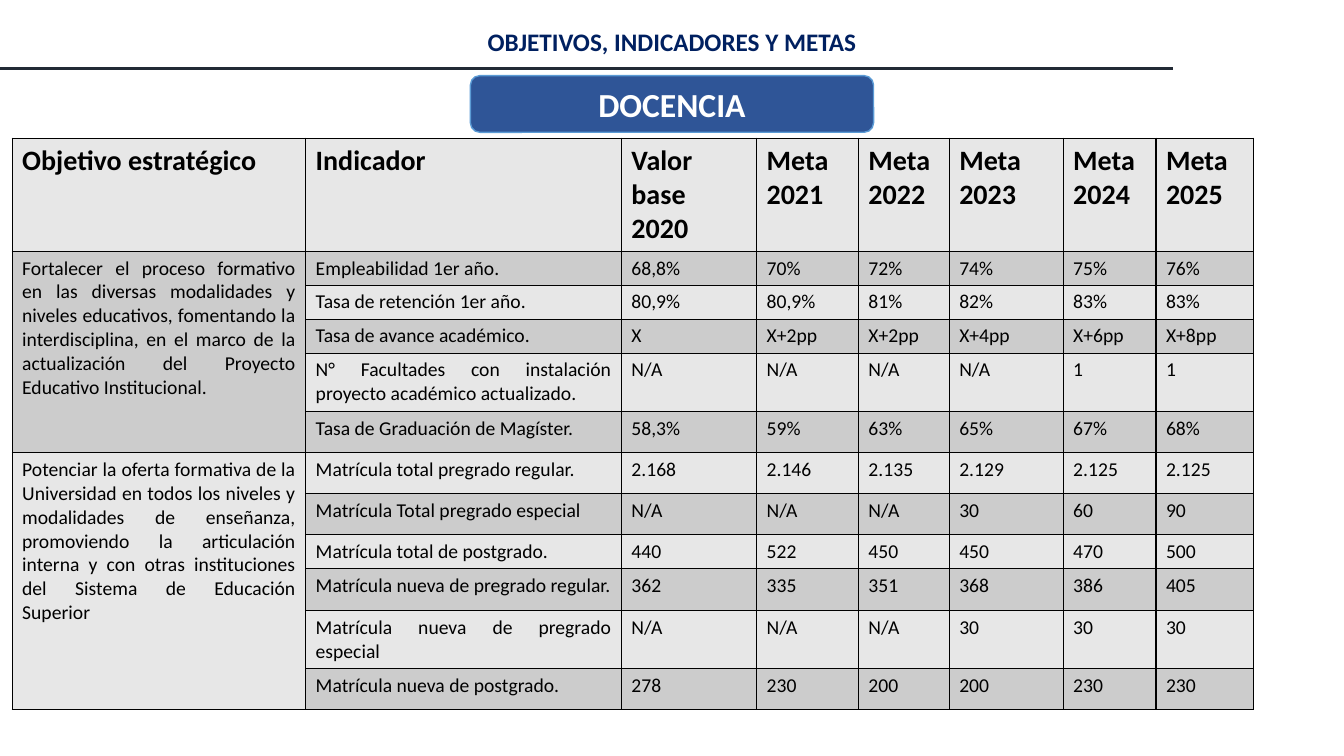
"""Build the slide of teaching goals, indicators and targets."""
from lxml import etree
from pptx import Presentation
from pptx.dml.color import RGBColor
from pptx.enum.shapes import MSO_CONNECTOR, MSO_SHAPE
from pptx.enum.text import MSO_ANCHOR, MSO_AUTO_SIZE, PP_ALIGN
from pptx.oxml.ns import qn
from pptx.util import Inches, Pt

LINE = MSO_CONNECTOR.STRAIGHT
ROUND = MSO_SHAPE.ROUNDED_RECTANGLE
TOP, MIDDLE = MSO_ANCHOR.TOP, MSO_ANCHOR.MIDDLE
FIXED = MSO_AUTO_SIZE.NONE
LEFT, CENTER, JUSTIFY = PP_ALIGN.LEFT, PP_ALIGN.CENTER, PP_ALIGN.JUSTIFY

WIDE, HIGH = Inches(13.33), Inches(7.5)
FONT = "Calibri"
BLACK, WHITE, NAVY, BLUE = "000000", "FFFFFF", "002060", "2F5597"
EDGE, RULE = "5B9BD5", "222A35"
BANDS = ("E7E7E7", "CCCCCC")
SIDES = ("a:lnL", "a:lnR", "a:lnT", "a:lnB")

COLS = (2.91, 3.13, 1.34, 1.01, 0.9, 1.13, 0.92, 0.97)
ROWS = (1.07, 0.32, 0.32, 0.32, 0.57, 0.4, 0.4, 0.4, 0.32, 0.41, 0.55, 0.4)
HEAD = ["Objetivo estratégico", "Indicador", "Valor base 2020"] + [
    f"Meta {year}" for year in range(2021, 2026)]
GOALS = (
    ("Fortalecer el proceso formativo en las diversas modalidades y niveles "
     "educativos, fomentando la interdisciplina, en el marco de la "
     "actualización del Proyecto Educativo Institucional.", (
         ("Empleabilidad 1er año.", "68,8% 70% 72% 74% 75% 76%"),
         ("Tasa de retención 1er año.", "80,9% 80,9% 81% 82% 83% 83%"),
         ("Tasa de avance académico.", "X X+2pp X+2pp X+4pp X+6pp X+8pp"),
         ("N° Facultades con instalación proyecto académico actualizado.",
          "N/A N/A N/A N/A 1 1"),
         ("Tasa de Graduación de Magíster.", "58,3% 59% 63% 65% 67% 68%"))),
    ("Potenciar la oferta formativa de la Universidad en todos los niveles y "
     "modalidades de enseñanza, promoviendo la articulación interna y con "
     "otras instituciones del Sistema de Educación Superior", (
         ("Matrícula total pregrado regular.",
          "2.168 2.146 2.135 2.129 2.125 2.125"),
         ("Matrícula Total pregrado especial", "N/A N/A N/A 30 60 90"),
         ("Matrícula total de postgrado.", "440 522 450 450 470 500"),
         ("Matrícula nueva de pregrado regular.", "362 335 351 368 386 405"),
         ("Matrícula nueva de pregrado especial", "N/A N/A N/A 30 30 30"),
         ("Matrícula nueva de postgrado.", "278 230 200 200 230 230"))),
)


def across(share):
    """Turn a percentage of the slide's width into a length."""
    return round(WIDE * share / 100)


def down(share):
    """Turn a percentage of the slide's height into a length."""
    return round(HIGH * share / 100)


def color(text):
    """Turn a hex string into a colour."""
    return RGBColor.from_string(text)


def paint(item, tone):
    """Fill a shape or cell with one colour."""
    item.fill.solid()
    item.fill.fore_color.rgb = color(tone)


def write(frame, text, size, tone, bold, align):
    """Put one formatted paragraph into a text frame."""
    frame.word_wrap = True
    frame.text = text
    line = frame.paragraphs[0]
    line.alignment = align
    font = line.font
    font.name, font.size, font.bold = FONT, Pt(size), bold
    font.color.rgb = color(tone)


def add_title(slide, text):
    """Place and format the title placeholder."""
    title = slide.shapes.title
    title.left, title.top = across(19.4), down(2.8)
    title.width, title.height = across(61.2), down(5.3)
    paint(title, WHITE)
    write(title.text_frame, text, 18, NAVY, True, CENTER)
    title.text_frame.auto_size = FIXED
    title.text_frame.vertical_anchor = TOP


def add_badge(slide, text):
    """Add the rounded label of the section."""
    badge = slide.shapes.add_shape(
        ROUND, across(35), down(10), across(30), down(7.5))
    badge.shadow.inherit = False
    paint(badge, BLUE)
    badge.line.color.rgb = color(EDGE)
    badge.line.width = Pt(1)
    write(badge.text_frame, text, 24, WHITE, True, CENTER)
    badge.text_frame.vertical_anchor = MIDDLE


def add_rule(slide):
    """Add the line under the title."""
    rule = slide.shapes.add_connector(
        LINE, 0, down(9.1), across(87.25), down(9.1))
    rule.line.color.rgb = color(RULE)
    rule.line.width = Pt(2)
    props = rule._element.spPr
    etree.SubElement(props, qn("a:effectLst"))


def frame_cell(cell):
    """Draw a thin black border on all sides of a cell."""
    props = cell._tc.get_or_add_tcPr()
    for spot, side in enumerate(SIDES):
        edge = etree.Element(qn(side), w=str(Pt(1)))
        fill = etree.SubElement(edge, qn("a:solidFill"))
        etree.SubElement(fill, qn("a:srgbClr"), val=BLACK)
        props.insert(spot, edge)


def fill_cell(cell, text, tone, size=14, bold=False, align=LEFT):
    """Write, fill and frame one cell."""
    write(cell.text_frame, text, size, BLACK, bold, align)
    paint(cell, tone)
    frame_cell(cell)


def add_grid(slide):
    """Add the empty table with its column and row sizes."""
    wide, high = across(92.4), down(74.4)
    grid = slide.shapes.add_table(
        len(ROWS), len(COLS), across(0.9), down(18.3), wide, high).table
    grid.horz_banding = False
    for col, part in zip(grid.columns, COLS):
        col.width = round(wide * part / sum(COLS))
    for row, part in zip(grid.rows, ROWS):
        row.height = round(high * part / sum(ROWS))
    return grid


def fill_grid(grid):
    """Fill the heading and the rows of each goal."""
    for col, text in enumerate(HEAD):
        fill_cell(grid.cell(0, col), text, BANDS[0], 20, True)
    row = 1
    for goal, marks in GOALS:
        first, last = row, row + len(marks) - 1
        grid.cell(first, 0).merge(grid.cell(last, 0))
        for name, values in marks:
            tone = BANDS[row % 2]
            text = goal if row == first else ""
            fill_cell(grid.cell(row, 0), text, BANDS[first % 2], align=JUSTIFY)
            fill_cell(grid.cell(row, 1), name, tone, align=JUSTIFY)
            for col, value in enumerate(values.split(), 2):
                fill_cell(grid.cell(row, col), value, tone)
            row += 1


def main():
    """Build and save the slide."""
    deck = Presentation()
    deck.slide_width, deck.slide_height = WIDE, HIGH
    slide = deck.slides.add_slide(deck.slide_layouts[5])
    add_title(slide, "OBJETIVOS, INDICADORES Y METAS")
    add_badge(slide, "DOCENCIA")
    add_rule(slide)
    fill_grid(add_grid(slide))
    deck.save("out.pptx")


if __name__ == "__main__":
    main()
